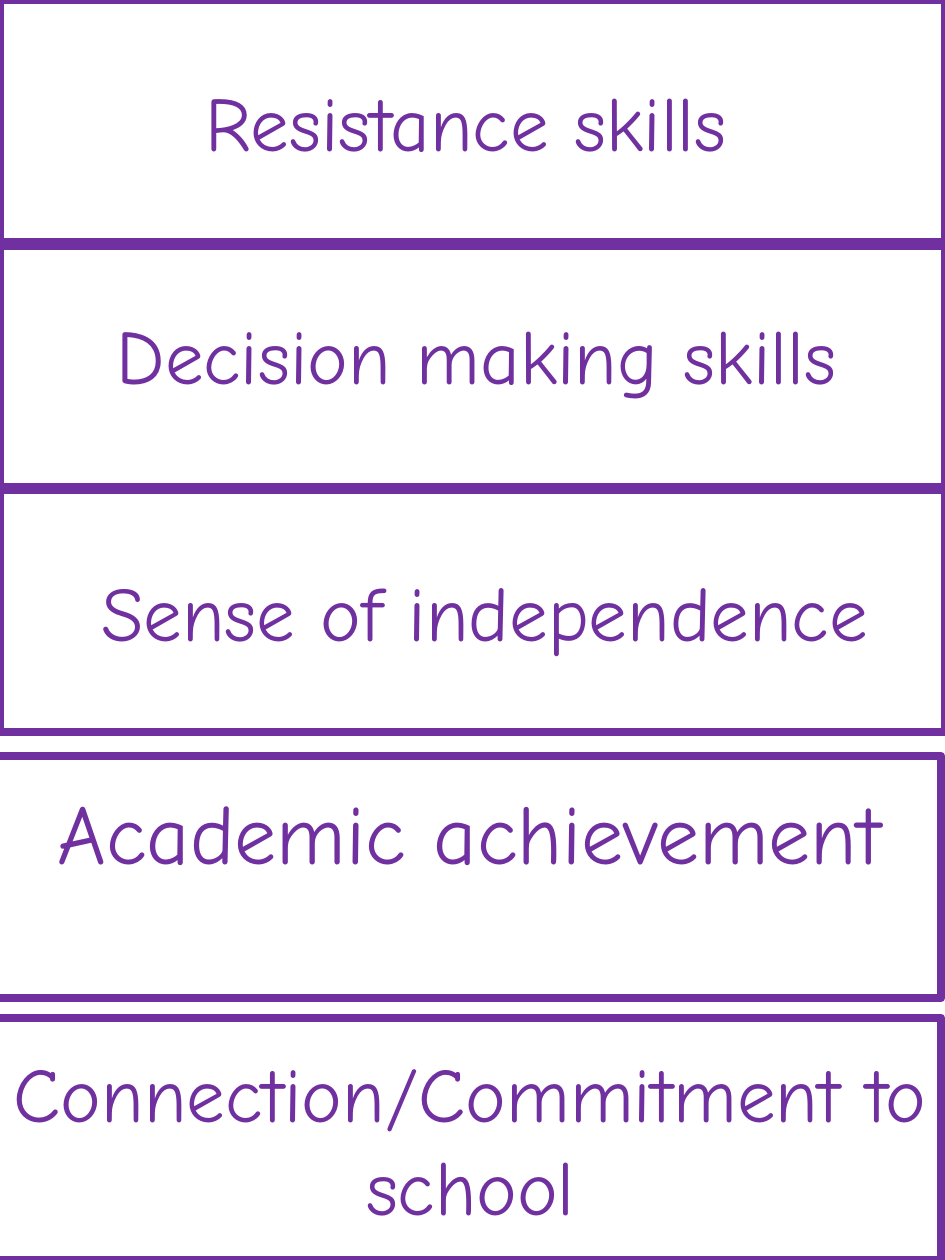
from pptx import Presentation
from pptx.dml.color import RGBColor
from pptx.enum.shapes import MSO_SHAPE
from pptx.enum.text import MSO_AUTO_SIZE, PP_ALIGN
from pptx.util import Cm, Pt

PURPLE = RGBColor(0x70, 0x30, 0xA0)
FONT = "Comic Neue"
RECTANGLE = MSO_SHAPE.RECTANGLE
CENTER = PP_ALIGN.CENTER
GROW = MSO_AUTO_SIZE.SHAPE_TO_FIT_TEXT

PAGE_WIDTH, PAGE_HEIGHT = 19.05, 25.4
CARD_HEIGHT = 4.88
CARD_CORNERS = [(0, 0), (0, 4.95), (0, 9.88), (-0.08, 15.24), (-0.08, 20.52)]
LABELS = [
    ("Resistance skills", 0.3, 1.37, 18.21, 2.13, 44),
    ("Decision making skills", 0.13, 6.07, 18.97, 2.13, 44),
    ("Sense of independence", -0.64, 11.25, 20.83, 2.13, 44),
    ("Academic achievement", 0.36, 15.62, 18.21, 4.37, 48),
    ("Connection/Commitment to school", 0, 20.96, 18.97, 4.01, 44),
]


def add_card(page, left, top):
    card = page.shapes.add_shape(
        RECTANGLE, Cm(left), Cm(top), Cm(PAGE_WIDTH), Cm(CARD_HEIGHT)
    )
    card.shadow.inherit = False
    card.fill.background()
    card.line.color.rgb = PURPLE
    card.line.width = Pt(5)


def write_text(frame, text, *, size, color=PURPLE, font=FONT, align=CENTER):
    para = frame.paragraphs[0]
    para.alignment = align
    span = para.add_run()
    span.text = text
    span.font.name = font
    span.font.size = Pt(size)
    span.font.color.rgb = color


def add_label(page, text, left, top, width, height, size):
    box = page.shapes.add_textbox(Cm(left), Cm(top), Cm(width), Cm(height))
    frame = box.text_frame
    frame.word_wrap = True
    frame.auto_size = GROW
    write_text(frame, text, size=size)


def main():
    deck = Presentation()
    deck.slide_width = Cm(PAGE_WIDTH)
    deck.slide_height = Cm(PAGE_HEIGHT)
    page = deck.slides.add_slide(deck.slide_layouts[6])
    for left, top in CARD_CORNERS:
        add_card(page, left, top)
    for label in LABELS:
        add_label(page, *label)
    deck.save("out.pptx")


if __name__ == "__main__":
    main()
